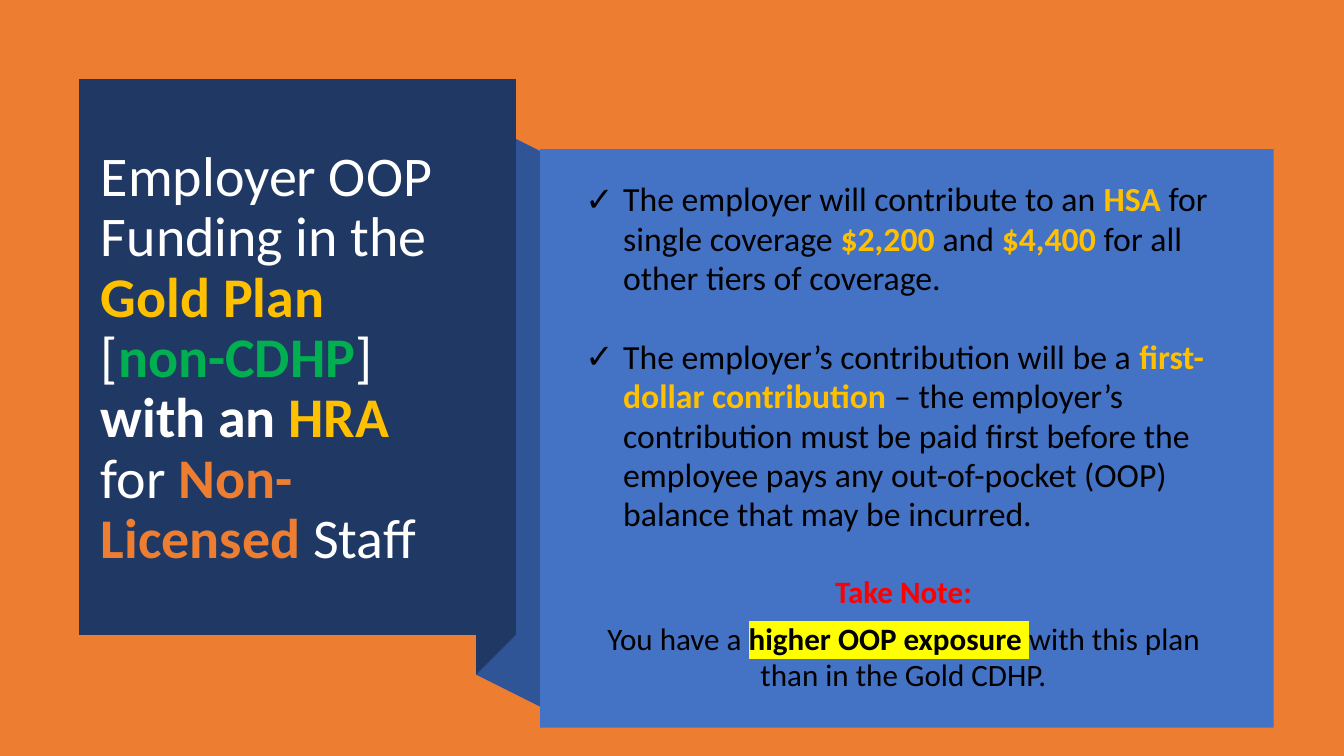
"""Build the slide on employer out-of-pocket funding in the Gold Plan."""
import pptx
import pptx.util
import pptx.dml.color
import pptx.enum.shapes
import pptx.enum.text
import pptx.oxml.ns
import lxml.etree

COLORS = {
    "orange": "ED7D31", "navy": "203864", "fold": "2F5597", "blue": "4472C4",
    "white": "FFFFFF", "black": "000000", "gold": "FFC000", "green": "00B050",
    "red": "FF0000", "yellow": "FFFF00",
}
FONT = "Calibri"

TITLE_LINES = [
    [("Employer OOP Funding in the", "white", False)],
    [("Gold Plan ", "gold", True)],
    [("[", "white", False), ("non-CDHP", "green", True), ("] ", "white", False)],
    [("with an ", "white", True), ("HRA ", "gold", True)],
    [("for ", "white", False), ("Non-Licensed", "orange", True), (" Staff", "white", False)],
]
BULLETS = [
    [("The employer will contribute to an ", "black", False), ("HSA", "gold", True),
     (" for single coverage ", "black", False), ("$2,200 ", "gold", True),
     ("and ", "black", False), ("$4,400 ", "gold", True),
     ("for all other tiers of coverage.", "black", False)],
    [("The employer’s contribution will be a ", "black", False),
     ("first-dollar contribution ", "gold", True),
     ("– the employer’s contribution must be paid first before the employee pays "
      "any out-of-pocket (OOP) balance that may be incurred.", "black", False)],
]
NOTES = [
    [("Take Note:", "red", True)],
    [("You have a ", "black", False), ("higher OOP exposure ", "black", True, "yellow"),
     ("with this plan than in the Gold CDHP.", "black", False)],
]

RIBBON = [
    ("fold", [(13.61, 18.36), (11.51, 17.07), (11.51, 2.51), (13.61, 3.81)]),
    ("navy", [(12.87, 16.36), (11.51, 17.09), (11.51, 2.49), (12.87, 1.75)]),
    ("navy", [(1.76, 1.78), (12.88, 1.78), (12.88, 16.38), (1.76, 16.38)]),
]
BODY_PANEL = (13.61, 3.76, 18.49, 14.58)
TITLE_BOX = (2.29, 2.72, 9.73, 12.67)
BODY_BOX = (14.5, 4.42, 16.54, 13.87)
BULLET_INDENT = 0.95
SECTION_GAP = 28.5


def rgb(name):
    return pptx.dml.color.RGBColor.from_string(COLORS[name])


def paint(shape, color):
    shape.shadow.inherit = False
    shape.fill.solid()
    shape.fill.fore_color.rgb = rgb(color)
    shape.line.fill.background()


def place(placeholder, box, anchor):
    placeholder.left, placeholder.top, placeholder.width, placeholder.height = map(pptx.util.Cm, box)
    frame = placeholder.text_frame
    frame.word_wrap = True
    frame.auto_size = pptx.enum.text.MSO_AUTO_SIZE.NONE
    frame.vertical_anchor = anchor
    placeholder.element.getparent().append(placeholder.element)
    return frame


def add_runs(paragraph, parts):
    for text, color, bold, *highlight in parts:
        run = paragraph.add_run()
        run.text = text
        run.font.bold = bold
        run.font.color.rgb = rgb(color)
        for name in highlight:
            marker = lxml.etree.SubElement(run.font.fill._xPr, pptx.oxml.ns.qn("a:highlight"))
            lxml.etree.SubElement(marker, pptx.oxml.ns.qn("a:srgbClr"), val=COLORS[name])


def style(paragraph, size, spacing, align, before=0, after=0):
    paragraph.alignment = align
    paragraph.line_spacing = spacing
    paragraph.space_before = pptx.util.Pt(before)
    paragraph.space_after = pptx.util.Pt(after)
    paragraph.font.name = FONT
    paragraph.font.size = pptx.util.Pt(size)


def set_bullet(paragraph, char=None):
    props = paragraph._p.get_or_add_pPr()
    indent = pptx.util.Cm(BULLET_INDENT) if char else 0
    props.set("marL", str(indent))
    props.set("indent", str(-indent))
    bullet = lxml.etree.Element(pptx.oxml.ns.qn("a:buChar" if char else "a:buNone"))
    if char:
        bullet.set("char", char)
    props.find(pptx.oxml.ns.qn("a:defRPr")).addprevious(bullet)


def main():
    deck = pptx.Presentation()
    deck.slide_width = pptx.util.Cm(33.87)
    deck.slide_height = pptx.util.Cm(19.05)
    slide = deck.slides.add_slide(deck.slide_layouts[1])
    slide.background.fill.solid()
    slide.background.fill.fore_color.rgb = rgb("orange")
    align = pptx.enum.text.PP_ALIGN
    anchor = pptx.enum.text.MSO_ANCHOR

    for color, corners in RIBBON:
        outline = slide.shapes.build_freeform(*corners[0], scale=pptx.util.Cm(1))
        outline.add_line_segments(corners[1:], close=True)
        paint(outline.convert_to_shape(), color)

    title = place(slide.shapes.title, TITLE_BOX, anchor.MIDDLE).paragraphs[0]
    style(title, 40, 0.9, align.LEFT)
    for number, parts in enumerate(TITLE_LINES):
        if number:
            title.add_line_break()
        add_runs(title, parts)

    panel = slide.shapes.add_shape(
        pptx.enum.shapes.MSO_SHAPE.RECTANGLE, *map(pptx.util.Cm, BODY_PANEL))
    paint(panel, "blue")

    body = place(slide.placeholders[1], BODY_BOX, anchor.TOP)
    for number, parts in enumerate(BULLETS):
        item = body.add_paragraph() if number else body.paragraphs[0]
        style(item, 24.1, 0.97, align.LEFT, before=SECTION_GAP if number else 0)
        set_bullet(item, "✓")
        add_runs(item, parts)
    for number, parts in enumerate(NOTES):
        note = body.add_paragraph()
        style(note, 22.2, 0.97, align.CENTER, before=0 if number else SECTION_GAP, after=8)
        set_bullet(note)
        add_runs(note, parts)

    deck.save("out.pptx")


if __name__ == "__main__":
    main()
